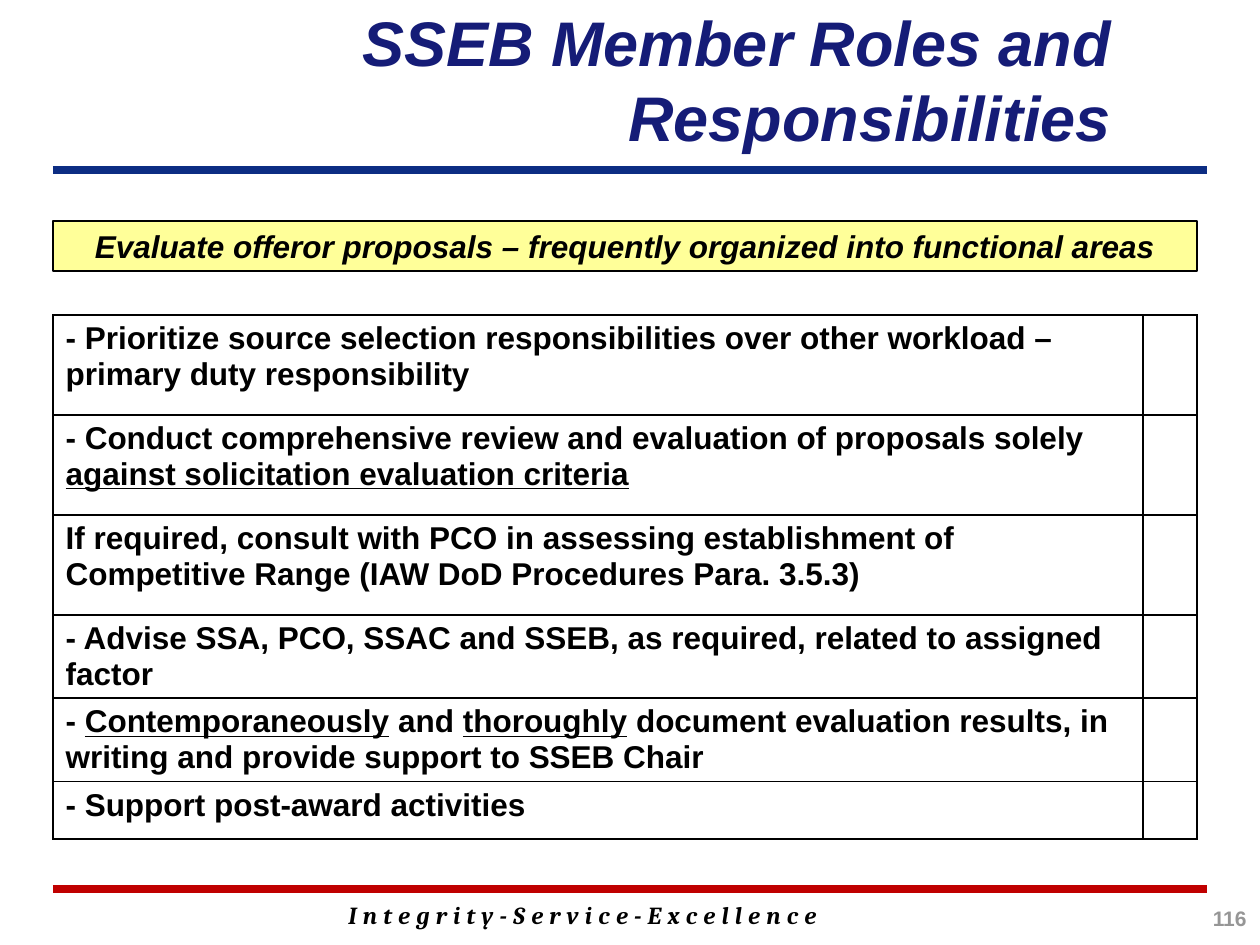
from dataclasses import dataclass
from lxml import etree
from pptx import Presentation
from pptx import util as u
from pptx.dml.color import RGBColor
from pptx.enum import shapes, text
from pptx.oxml import ns

PX = 914400 / 126


@dataclass(frozen=True)
class Theme:
    title: str = "151C77"
    header_rule: str = "0C2D83"
    footer_rule: str = "C00000"
    banner: str = "FFFF99"
    ink: str = "000000"
    number: str = "969696"
    font: str = "Arial"
    motto_font: str = "Cambria"
    title_size: int = 36
    body_size: int = 18
    motto_size: int = 14
    number_size: int = 12


THEME = Theme()
LEFT, RULE_RIGHT, CONTENT_WIDTH = 53, 1207, 1144
ROW_HEIGHTS = (100, 100, 100, 58, 58, 58)
COLUMN_WIDTHS = (1090, 54)
DUTIES = (
    (("- Prioritize source selection responsibilities over other workload – primary duty responsibility", False),),
    (("- Conduct comprehensive review and evaluation of proposals solely ", False),
     ("against solicitation evaluation criteria", True)),
    (("If required, consult with PCO in assessing establishment of Competitive Range "
      "(IAW DoD Procedures Para. 3.5.3)", False),),
    (("- Advise SSA, PCO, SSAC and SSEB, as required, related to assigned factor", False),),
    (("- ", False), ("Contemporaneously", True), (" and ", False), ("thoroughly", True),
     (" document evaluation results, in writing and provide support to SSEB Chair", False)),
    (("- Support post-award activities", False),),
)


def px(value):
    return u.Emu(round(value * PX))


def box_px(box):
    return [px(value) for value in box]


def color(value):
    return RGBColor.from_string(value)


def style(paragraph, size, ink, name=THEME.font, italic=False, align=None):
    font = paragraph.font
    font.name, font.size, font.bold, font.italic = name, u.Pt(size), True, italic
    font.color.rgb = color(ink)
    paragraph.alignment = align


def add_label(slide, box, label, size, ink, **options):
    shape = slide.shapes.add_textbox(*box_px(box))
    shape.text_frame.word_wrap = True
    paragraph = shape.text_frame.paragraphs[0]
    paragraph.text = label
    style(paragraph, size, ink, **options)
    return paragraph


def add_rule(slide, y, ink):
    line = slide.shapes.add_connector(shapes.MSO_CONNECTOR.STRAIGHT, px(LEFT), px(y), px(RULE_RIGHT), px(y))
    line.line.color.rgb = color(ink)
    line.line.width = u.Pt(4.5)
    etree.SubElement(line._element.spPr, ns.qn("a:effectLst"))


def add_header(slide, box):
    title = slide.shapes.title
    title.left, title.top, title.width, title.height = box_px(box)
    title.text_frame.vertical_anchor = text.MSO_ANCHOR.MIDDLE
    title.text_frame.word_wrap = True
    paragraph = title.text_frame.paragraphs[0]
    paragraph.text = "SSEB Member Roles and Responsibilities"
    style(paragraph, THEME.title_size, THEME.title, italic=True, align=text.PP_ALIGN.RIGHT)
    add_rule(slide, box[1] + box[3] + 13, THEME.header_rule)


def add_banner(slide, box):
    banner = slide.shapes.add_shape(shapes.MSO_SHAPE.RECTANGLE, *box_px(box))
    banner.shadow.inherit = False
    banner.fill.solid()
    banner.fill.fore_color.rgb = color(THEME.banner)
    banner.line.color.rgb = color(THEME.ink)
    banner.line.width = u.Pt(0.75)
    banner.text_frame.word_wrap = True
    paragraph = banner.text_frame.paragraphs[0]
    paragraph.text = "Evaluate offeror proposals – frequently organized into functional areas"
    style(paragraph, THEME.body_size, THEME.ink, italic=True, align=text.PP_ALIGN.CENTER)


def set_borders(cell):
    properties = cell._tc.get_or_add_tcPr()
    for index, side in enumerate(("lnL", "lnR", "lnT", "lnB")):
        border = etree.Element(ns.qn(f"a:{side}"), w=str(u.Pt(1)))
        fill = etree.SubElement(border, ns.qn("a:solidFill"))
        etree.SubElement(fill, ns.qn("a:srgbClr"), val=THEME.ink)
        properties.insert(index, border)


def add_duties(slide, left, top):
    box = (left, top, sum(COLUMN_WIDTHS), sum(ROW_HEIGHTS))
    table = slide.shapes.add_table(len(DUTIES), len(COLUMN_WIDTHS), *box_px(box)).table
    table.first_row = table.horz_banding = False
    for column, width in zip(table.columns, COLUMN_WIDTHS):
        column.width = px(width)
    for row, height, duty in zip(table.rows, ROW_HEIGHTS, DUTIES):
        row.height = px(height)
        for cell in row.cells:
            cell.fill.background()
            set_borders(cell)
        paragraph = row.cells[0].text_frame.paragraphs[0]
        for wording, underlined in duty:
            run = paragraph.add_run()
            run.text = wording
            if underlined:
                run.font.underline = True
        style(paragraph, THEME.body_size, THEME.ink)


def add_footer(slide, top):
    add_rule(slide, top, THEME.footer_rule)
    motto = add_label(slide, (336, top + 5, 762, 43), "I n t e g r i t y - S e r v i c e - E x c e l l e n c e",
                      THEME.motto_size, THEME.ink, name=THEME.motto_font, italic=True)
    motto.runs[0].font._element.set("spc", "23")
    add_label(slide, (1101, top + 10, 158, 42), "116", THEME.number_size, THEME.number,
              align=text.PP_ALIGN.RIGHT)


def main():
    presentation = Presentation()
    presentation.slide_width, presentation.slide_height = px(1260), px(945)
    slide = presentation.slides.add_slide(presentation.slide_layouts[5])
    add_header(slide, (179, 1, 945, 156))
    add_duties(slide, LEFT, 315)
    add_banner(slide, (LEFT, 221, CONTENT_WIDTH, 50))
    add_footer(slide, 889)
    presentation.save("out.pptx")


if __name__ == "__main__":
    main()
